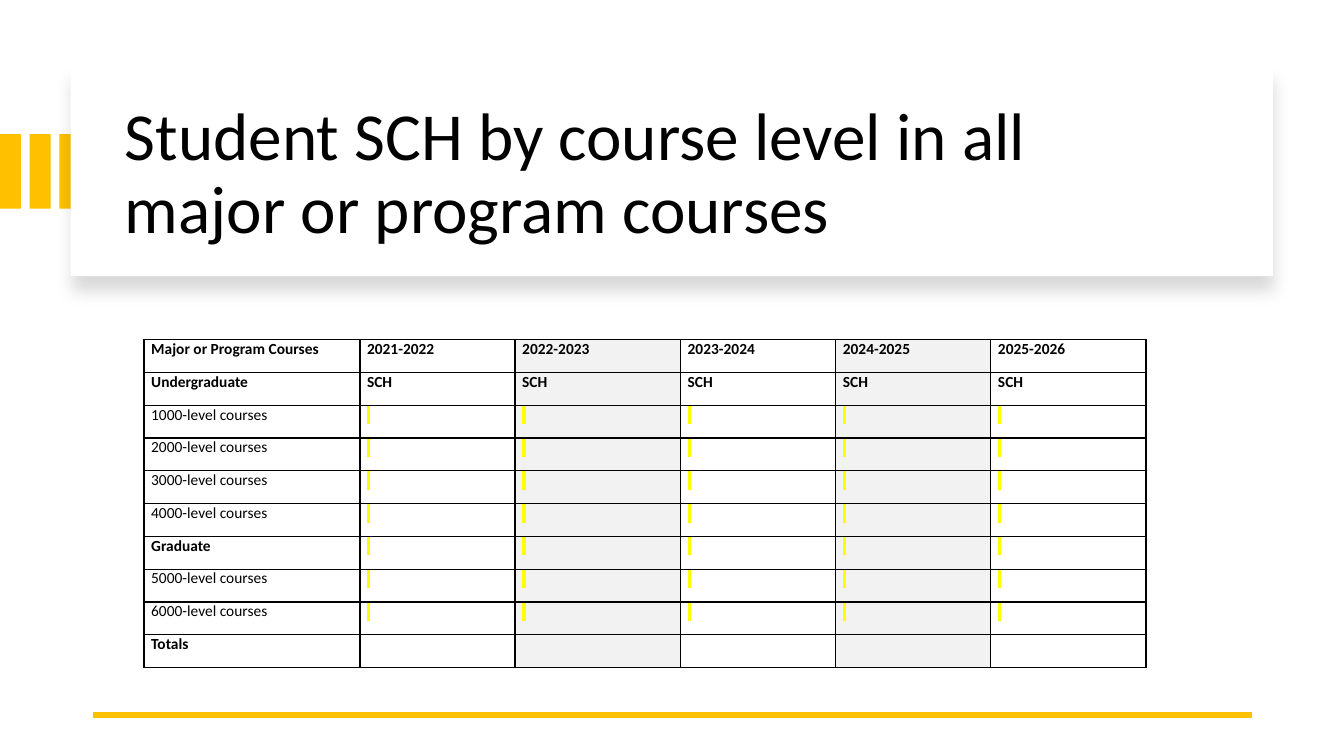
from lxml import etree
from pptx import Presentation
from pptx.dml.color import RGBColor
from pptx.enum.shapes import MSO_CONNECTOR, MSO_SHAPE
from pptx.enum.text import MSO_ANCHOR
from pptx.oxml import parse_xml
from pptx.oxml.ns import nsdecls, qn
from pptx.util import Cm, Pt

RECTANGLE = MSO_SHAPE.RECTANGLE
STRAIGHT = MSO_CONNECTOR.STRAIGHT
MIDDLE = MSO_ANCHOR.MIDDLE
FONT = "Calibri"
COLORS = {"accent": "FFC000", "white": "FFFFFF", "black": "000000",
          "shade": "F2F2F2", "highlight": "FFFF00"}
RGB = {name: RGBColor.from_string(value) for name, value in COLORS.items()}

prs = Presentation()
prs.slide_width, prs.slide_height = Cm(33.87), Cm(19.05)
s = prs.slides.add_slide(prs.slide_layouts[6])


def add_rect(left, top, width, height, color):
    sp = s.shapes.add_shape(RECTANGLE, Cm(left), Cm(top), Cm(width), Cm(height))
    sp.shadow.inherit = False
    sp.fill.solid()
    sp.fill.fore_color.rgb = RGB[color]
    sp.line.fill.background()
    return sp


def style_run(r, size, bold=False):
    r.font.name = FONT
    r.font.size = Pt(size)
    r.font.bold = bold
    r.font.color.rgb = RGB["black"]


# Accent bars and title panel
for i in range(3):
    add_rect(i * 0.75, 3.38, 0.53, 1.88, "accent")

panel = add_rect(1.78, 1.7, 30.3, 5.26, "white")
effects = panel._element.spPr.find(qn("a:effectLst"))
effects.append(parse_xml(
    f'<a:outerShdw {nsdecls("a")} blurRad="{Pt(11)}" dist="{Pt(10)}" dir="5400000" '
    f'algn="t" rotWithShape="0"><a:srgbClr val="{COLORS["black"]}">'
    '<a:alpha val="15000"/></a:srgbClr></a:outerShdw>'))

title = s.shapes.add_textbox(Cm(2.9), Cm(2.26), Cm(27.61), Cm(4.32))
tf = title.text_frame
tf.word_wrap = True
tf.vertical_anchor = MIDDLE
tf.text = "Student SCH by course level in all major or program courses"
p = tf.paragraphs[0]
p.line_spacing = 0.9
style_run(p.runs[0], 48)

# Bottom rule
rule = s.shapes.add_connector(STRAIGHT, Cm(31.55), Cm(18.01), Cm(2.34), Cm(18.01))
rule.line.color.rgb = RGB["accent"]
rule.line.width = Pt(4.5)
etree.SubElement(rule._element.spPr, qn("a:effectLst"))

# Course table: a lone space carries the highlight in cells still to be filled in
YEARS = [f"{year}-{year + 1}" for year in range(2021, 2026)]
TO_FILL = [" "] * len(YEARS)
ROWS = [
    ["Major or Program Courses", *YEARS],
    ["Undergraduate"] + ["SCH"] * len(YEARS),
    *[[f"{level}-level courses", *TO_FILL] for level in range(1000, 5000, 1000)],
    ["Graduate", *TO_FILL],
    *[[f"{level}-level courses", *TO_FILL] for level in (5000, 6000)],
    ["Totals"] + [""] * len(YEARS),
]
COLUMN_WIDTHS = [5.44, 3.91, 4.17, 3.91, 3.91, 3.91]
SHADED_COLUMNS = (2, 4)

table = s.shapes.add_table(len(ROWS), len(COLUMN_WIDTHS), Cm(3.63), Cm(8.56),
                           Cm(sum(COLUMN_WIDTHS)), Cm(8.26)).table
table.first_row = table.horz_banding = False
for column, width in zip(table.columns, COLUMN_WIDTHS):
    column.width = Cm(width)

for i, texts in enumerate(ROWS):
    for j, text in enumerate(texts):
        cell = table.cell(i, j)
        cell.margin_left = cell.margin_right = Cm(0.18)
        cell.margin_top = cell.margin_bottom = 0
        tcPr = cell._tc.get_or_add_tcPr()
        for side in ("lnL", "lnR", "lnT", "lnB"):
            tcPr.append(parse_xml(
                f'<a:{side} {nsdecls("a")} w="{Pt(1)}"><a:solidFill>'
                f'<a:srgbClr val="{COLORS["black"]}"/></a:solidFill></a:{side}>'))
        cell.fill.solid()
        cell.fill.fore_color.rgb = RGB["shade" if j in SHADED_COLUMNS else "white"]
        cell.text_frame.text = text
        p = cell.text_frame.paragraphs[0]
        p.font.size = Pt(11)
        for r in p.runs:
            style_run(r, 11, bold=not text.endswith("courses"))
            if text == " ":
                fill = r._r.rPr.find(qn("a:solidFill"))
                fill.addnext(parse_xml(
                    f'<a:highlight {nsdecls("a")}>'
                    f'<a:srgbClr val="{COLORS["highlight"]}"/></a:highlight>'))

prs.save("out.pptx")
